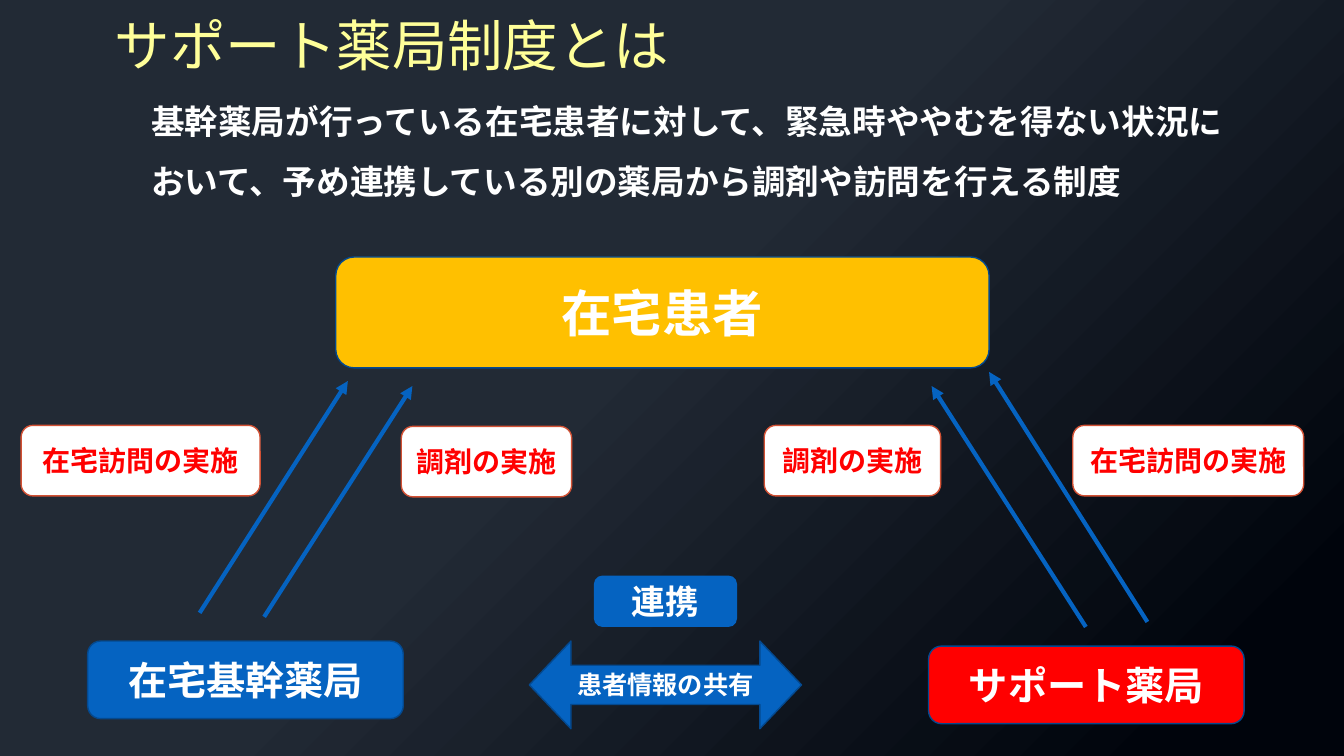
"""Build the slide that explains the support pharmacy system."""
from dataclasses import dataclass
from typing import Optional

from lxml import etree
from pptx import Presentation
from pptx import util as u
from pptx.dml.color import RGBColor
from pptx.enum import shapes, text
from pptx.oxml.ns import qn

EMU_PER_PX = 9144
WIDTH, HEIGHT = 1333, 750

SLATE = RGBColor(0x22, 0x2A, 0x35)
NIGHT = RGBColor(0x00, 0x04, 0x0C)
YELLOW = RGBColor(0xFF, 0xFF, 0x99)
WHITE = RGBColor(0xFF, 0xFF, 0xFF)
GOLD = RGBColor(0xFF, 0xC0, 0x00)
BLUE = RGBColor(0x05, 0x63, 0xC1)
NAVY = RGBColor(0x04, 0x49, 0x8F)
RED = RGBColor(0xFF, 0x00, 0x00)
RUST = RGBColor(0xD2, 0x51, 0x34)

JAPANESE_FONT = "Noto Sans CJK JP"
LATIN_FONT = "Calibri"
ROUNDED = shapes.MSO_SHAPE.ROUNDED_RECTANGLE
DOUBLE_ARROW = shapes.MSO_SHAPE.LEFT_RIGHT_ARROW


@dataclass(frozen=True)
class Box:
    """A filled shape with centred bold text."""
    label: str
    left: int
    top: int
    width: int
    height: int
    size: int
    fill: RGBColor
    line: Optional[RGBColor] = NAVY
    color: RGBColor = WHITE
    font: str = JAPANESE_FONT
    kind: shapes.MSO_SHAPE = ROUNDED
    adjustments: tuple[float, ...] = ()


@dataclass(frozen=True)
class Arrow:
    """A straight arrow from a pharmacy towards the patient."""
    start_x: int
    start_y: int
    end_x: int
    end_y: int


def service(label: str, left: int, top: int, width: int) -> Box:
    """Describe a white label that names a service."""
    return Box(label, left, top, width, 70, 20, WHITE, RUST, RED, LATIN_FONT)


BOXES = (
    Box("在宅患者", 333, 255, 648, 110, 36, GOLD),
    Box("在宅基幹薬局", 87, 636, 313, 77, 28, BLUE),
    Box("サポート薬局", 921, 641, 313, 77, 28, RED),
    Box("患者情報の共有", 525, 636, 270, 87, 18, BLUE, font=LATIN_FONT,
        kind=DOUBLE_ARROW, adjustments=(0.447, 0.475)),
    Box("連携", 589, 571, 142, 51, 24, BLUE, line=None),
)
ARROWS = (
    Arrow(1077, 622, 924, 383),
    Arrow(1138, 617, 981, 369),
    Arrow(198, 608, 345, 378),
    Arrow(262, 612, 409, 383),
)
SERVICES = (
    service("調剤の実施", 758, 422, 175),
    service("調剤の実施", 398, 423, 169),
    service("在宅訪問の実施", 1064, 422, 229),
    service("在宅訪問の実施", 21, 422, 237),
)


def px(length: int) -> u.Emu:
    """Turn px into EMU."""
    return u.Emu(length * EMU_PER_PX)


def write(shape, content: str, *, size: float, color: RGBColor, font: str = JAPANESE_FONT,
          bold: bool = True, align=text.PP_ALIGN.LEFT, anchor=text.MSO_ANCHOR.MIDDLE,
          spacing: float = 1.0) -> None:
    """Write one paragraph per line of content into a shape."""
    frame = shape.text_frame
    frame.word_wrap = True
    frame.vertical_anchor = anchor
    frame.text = content
    for paragraph in frame.paragraphs:
        paragraph.alignment = align
        paragraph.line_spacing = spacing
        for run in paragraph.runs:
            run.font.size = u.Pt(size)
            run.font.bold = bold
            run.font.color.rgb = color
            run.font.name = font
            east_asian = etree.SubElement(run.font._element, qn("a:ea"))
            east_asian.set("typeface", JAPANESE_FONT)


def add_text(slide, left: int, top: int, width: int, height: int):
    """Add an empty text box."""
    return slide.shapes.add_textbox(px(left), px(top), px(width), px(height))


def add_box(slide, box: Box) -> None:
    """Draw a box with its label."""
    shape = slide.shapes.add_shape(box.kind, px(box.left), px(box.top), px(box.width), px(box.height))
    shape.shadow.inherit = False
    for index, value in enumerate(box.adjustments):
        shape.adjustments[index] = value
    shape.fill.solid()
    shape.fill.fore_color.rgb = box.fill
    if box.line is None:
        shape.line.fill.background()
    else:
        shape.line.color.rgb = box.line
        shape.line.width = u.Pt(1)
    write(shape, box.label, size=box.size, color=box.color, font=box.font,
          align=text.PP_ALIGN.CENTER)


def add_arrow(slide, arrow: Arrow) -> None:
    """Draw an arrow with a triangle at its end."""
    connector = slide.shapes.add_connector(
        shapes.MSO_CONNECTOR.STRAIGHT, px(arrow.start_x), px(arrow.start_y),
        px(arrow.end_x), px(arrow.end_y))
    connector.line.color.rgb = BLUE
    connector.line.width = u.Pt(3)
    head = etree.SubElement(connector.line._get_or_add_ln(), qn("a:tailEnd"))
    head.set("type", "triangle")
    etree.SubElement(connector._element.spPr, qn("a:effectLst"))


def paint_background(slide) -> None:
    """Fill the background with a diagonal dark gradient."""
    fill = slide.background.fill
    fill.gradient()
    fill.gradient_angle = 315
    for stop, color, position in zip(fill.gradient_stops, (SLATE, NIGHT), (0.46, 0.91)):
        stop.color.rgb = color
        stop.position = position


def main() -> None:
    """Build and save the presentation."""
    presentation = Presentation()
    presentation.slide_width, presentation.slide_height = px(WIDTH), px(HEIGHT)
    slide = presentation.slides.add_slide(presentation.slide_layouts[6])
    paint_background(slide)
    write(add_text(slide, 104, 15, 940, 67), "サポート薬局制度とは",
          size=39.6, color=YELLOW, bold=False, spacing=0.9)
    write(add_text(slide, 140, 75, 1153, 131),
          "基幹薬局が行っている在宅患者に対して、緊急時ややむを得ない状況に\n"
          "おいて、予め連携している別の薬局から調剤や訪問を行える制度",
          size=24, color=WHITE, anchor=text.MSO_ANCHOR.TOP, spacing=1.5)
    for arrow in ARROWS:
        add_arrow(slide, arrow)
    for box in BOXES + SERVICES:
        add_box(slide, box)
    presentation.save("out.pptx")


if __name__ == "__main__":
    main()
